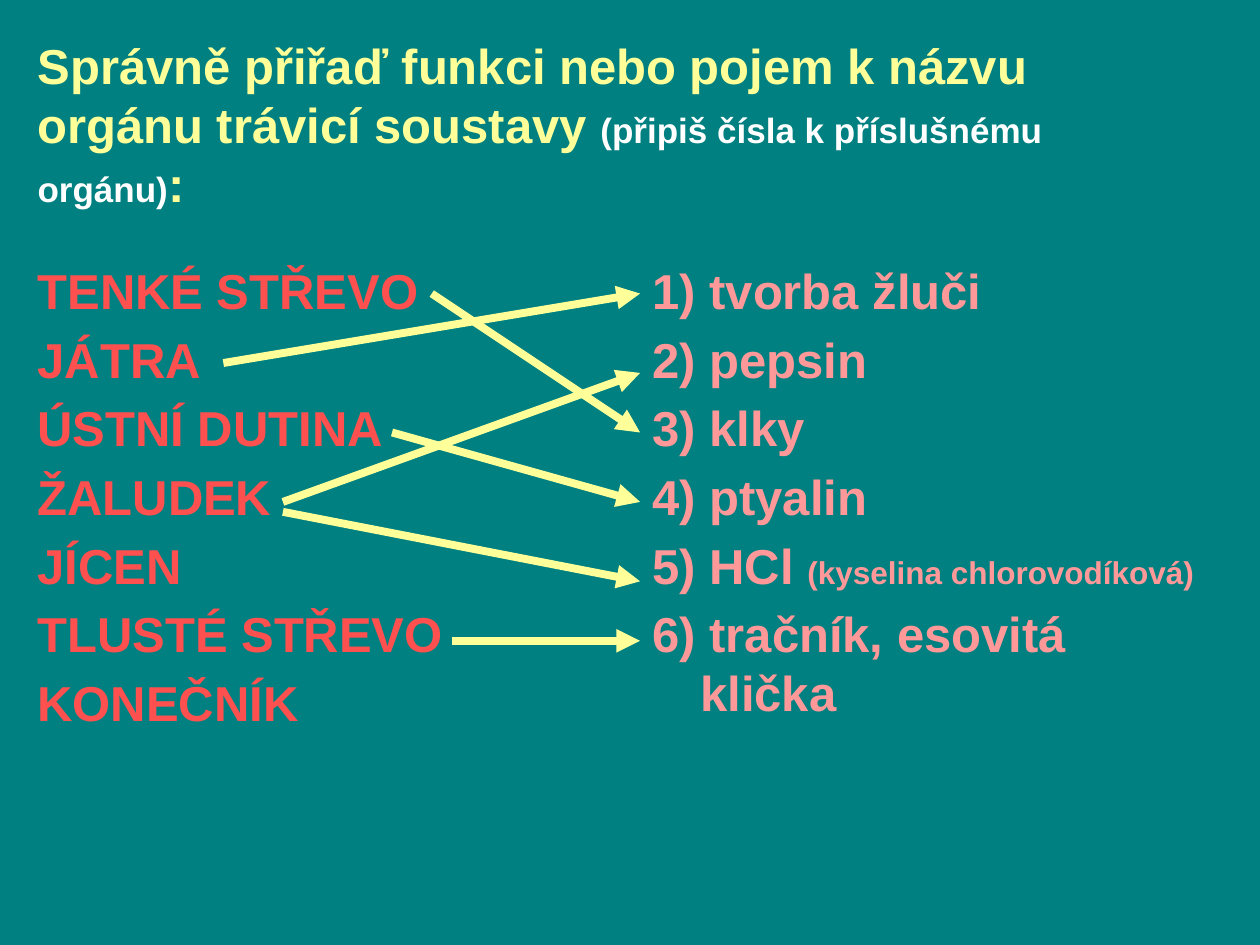
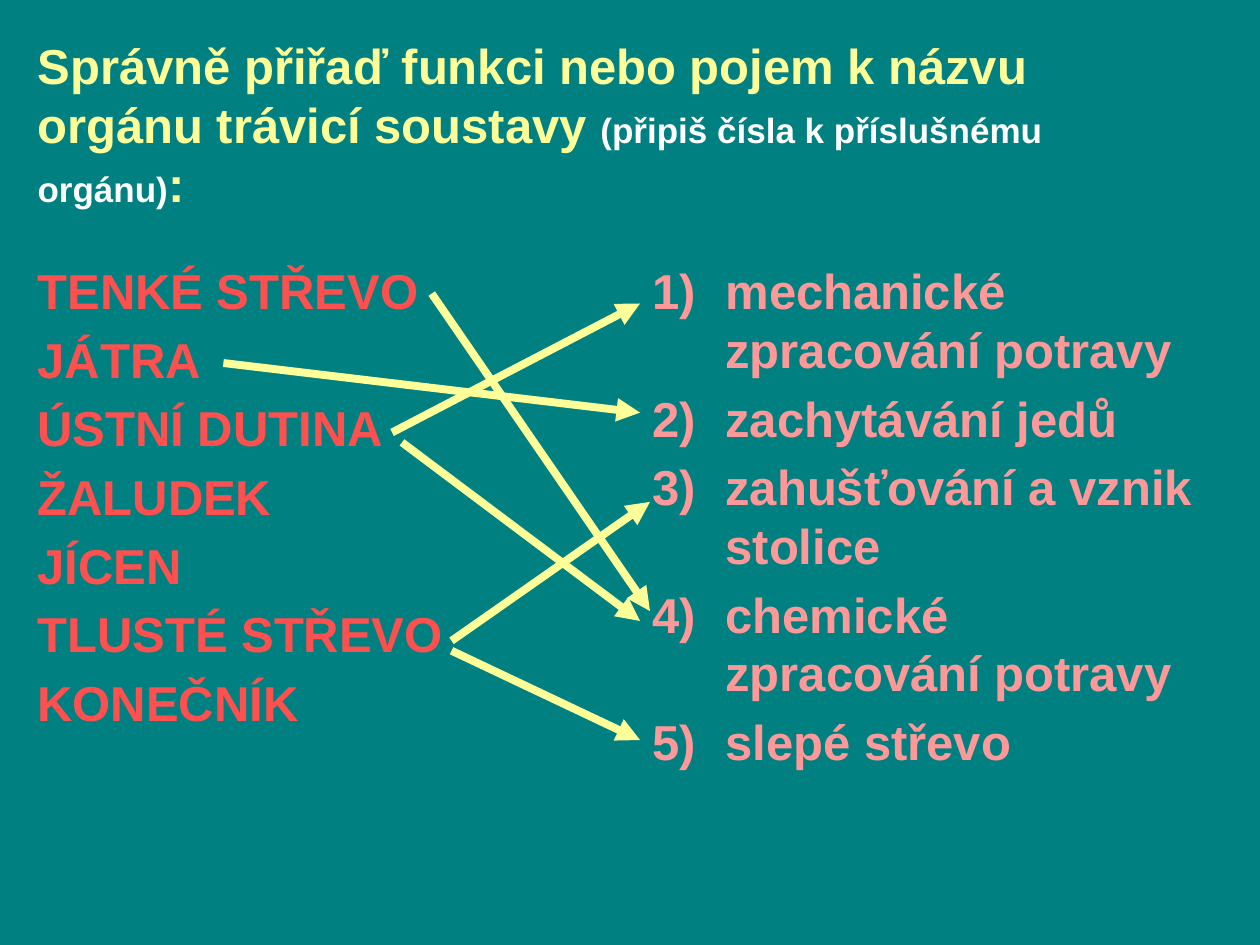
from lxml import etree
from pptx import Presentation
from pptx.dml.color import RGBColor
from pptx.enum.shapes import MSO_CONNECTOR
from pptx.enum.text import MSO_ANCHOR
from pptx.oxml.ns import qn
from pptx.util import Inches, Mm, Pt

STRAIGHT = MSO_CONNECTOR.STRAIGHT
TOP, MIDDLE = MSO_ANCHOR.TOP, MSO_ANCHOR.MIDDLE

TEAL, YELLOW, WHITE, RED, PINK = "008080", "FFFF99", "FFFFFF", "FF5050", "FF9999"
FONT = "Arial"
TEXT_SIZE, LINE_HEIGHT, PARAGRAPH_GAP = 28, 33.6, 5.6

TITLE_BOX = (0.2, 0.36, 9, 1.25)
ORGANS_BOX = (0.2, 2.02, 4.72, 5.28)
TERMS_BOX = (5.08, 2.02, 4.64, 5.28)
HANGING, NUMBERED_HANGING = 0.38, 0.58

STEP = Mm(2)
ROW_STEPS = 7
ARROW_TOP = Inches(0.31)

TITLE = [
    ("Správně přiřaď funkci nebo pojem k názvu orgánu trávicí soustavy ", TEXT_SIZE, YELLOW),
    ("(připiš čísla k příslušnému orgánu)", 20, WHITE),
    (":", TEXT_SIZE, YELLOW),
]
ORGANS = ["TENKÉ STŘEVO", "JÁTRA", "ÚSTNÍ DUTINA", "ŽALUDEK", "JÍCEN",
          "TLUSTÉ STŘEVO", "KONEČNÍK"]
ORGAN_END_STEPS = {"TENKÉ STŘEVO": -21, "JÁTRA": -42, "ÚSTNÍ DUTINA": -25,
                   "ŽALUDEK": -36, "TLUSTÉ STŘEVO": -19}

SUBSTANCES = [
    [("1) tvorba žluči", TEXT_SIZE, PINK)],
    [("2) pepsin", TEXT_SIZE, PINK)],
    [("3) klky", TEXT_SIZE, PINK)],
    [("4) ptyalin", TEXT_SIZE, PINK)],
    [("5) HCl ", TEXT_SIZE, PINK), ("(kyselina chlorovodíková)", 18, PINK)],
    [("6) tračník, esovitá klička", TEXT_SIZE, PINK)],
]
PROCESSES = [[(process, TEXT_SIZE, PINK)] for process in (
    "mechanické zpracování potravy", "zachytávání jedů",
    "zahušťování a vznik stolice", "chemické zpracování potravy", "slepé střevo")]

SUBSTANCE_MATCHES = [
    ("TENKÉ STŘEVO", (0, 0), (0, 14)),
    ("JÁTRA", (0, 0), (0, 0)),
    ("ÚSTNÍ DUTINA", (0, 0), (0, 21)),
    ("ŽALUDEK", (0, 0), (0, 8)),
    ("ŽALUDEK", (0, 1), (0, 29)),
    ("TLUSTÉ STŘEVO", (0, 0), (0, 35)),
]
PROCESS_MATCHES = [
    ("TENKÉ STŘEVO", (0, 0), (1, 32)),
    ("JÁTRA", (0, 0), (0, 12)),
    ("ÚSTNÍ DUTINA", (0, 0), (0, 1)),
    ("ÚSTNÍ DUTINA", (1, 1), (0, 33)),
    ("TLUSTÉ STŘEVO", (0, 0), (1, 21)),
    ("TLUSTÉ STŘEVO", (0, 1), (0, 45)),
]


def color(hex_string):
    """Return the colour for a hex string."""
    return RGBColor.from_string(hex_string)


def add_text(slide, box, paragraphs, anchor=TOP, hanging=0, numbered=False):
    """Fill a box with paragraphs made of (text, size, colour) parts."""
    frame = slide.shapes.add_textbox(*map(Inches, box)).text_frame
    frame.word_wrap = True
    frame.vertical_anchor = anchor
    for index, parts in enumerate(paragraphs):
        paragraph = frame.add_paragraph() if index else frame.paragraphs[0]
        paragraph.line_spacing = Pt(LINE_HEIGHT)
        paragraph.space_before = Pt(PARAGRAPH_GAP if index else 0)
        properties = paragraph._p.get_or_add_pPr()
        properties.set("marL", str(Inches(hanging)))
        properties.set("indent", str(-Inches(hanging)))
        if numbered:
            etree.SubElement(properties, qn("a:buAutoNum"), type="arabicParenR")
        for text, size, hex_string in parts:
            run = paragraph.add_run()
            run.text = text
            run.font.name = FONT
            run.font.size = Pt(size)
            run.font.bold = True
            run.font.color.rgb = color(hex_string)


def add_matches(slide, box, matches):
    """Draw arrows from organs to the left edge of the box of terms."""
    left, top = Inches(box[0]), Inches(box[1]) + ARROW_TOP
    for organ, (shift_x, shift_y), (end_x, end_y) in matches:
        start_x = ORGAN_END_STEPS[organ] + shift_x
        start_y = ORGANS.index(organ) * ROW_STEPS + shift_y
        arrow = slide.shapes.add_connector(
            STRAIGHT, left + start_x * STEP, top + start_y * STEP,
            left + end_x * STEP, top + end_y * STEP)
        arrow.line.color.rgb = color(YELLOW)
        arrow.line.width = Pt(4.5)
        etree.SubElement(arrow.line._get_or_add_ln(), qn("a:tailEnd"), type="triangle")
        etree.SubElement(arrow._element.spPr, qn("a:effectLst"))


def add_matching_slide(deck, terms, matches, hanging=HANGING, numbered=False):
    """Add a slide that matches the organs with a list of terms."""
    slide = deck.slides.add_slide(deck.slide_layouts[6])
    slide.background.fill.solid()
    slide.background.fill.fore_color.rgb = color(TEAL)
    add_text(slide, TITLE_BOX, [TITLE], MIDDLE)
    organs = [[(organ, TEXT_SIZE, RED)] for organ in ORGANS]
    add_text(slide, ORGANS_BOX, organs, hanging=HANGING)
    add_text(slide, TERMS_BOX, terms, hanging=hanging, numbered=numbered)
    add_matches(slide, TERMS_BOX, matches)


def main():
    """Build both matching slides and save the deck."""
    deck = Presentation()
    deck.slide_width, deck.slide_height = Inches(10), Inches(7.5)
    add_matching_slide(deck, SUBSTANCES, SUBSTANCE_MATCHES)
    add_matching_slide(deck, PROCESSES, PROCESS_MATCHES, NUMBERED_HANGING, True)
    deck.save("out.pptx")


if __name__ == "__main__":
    main()
